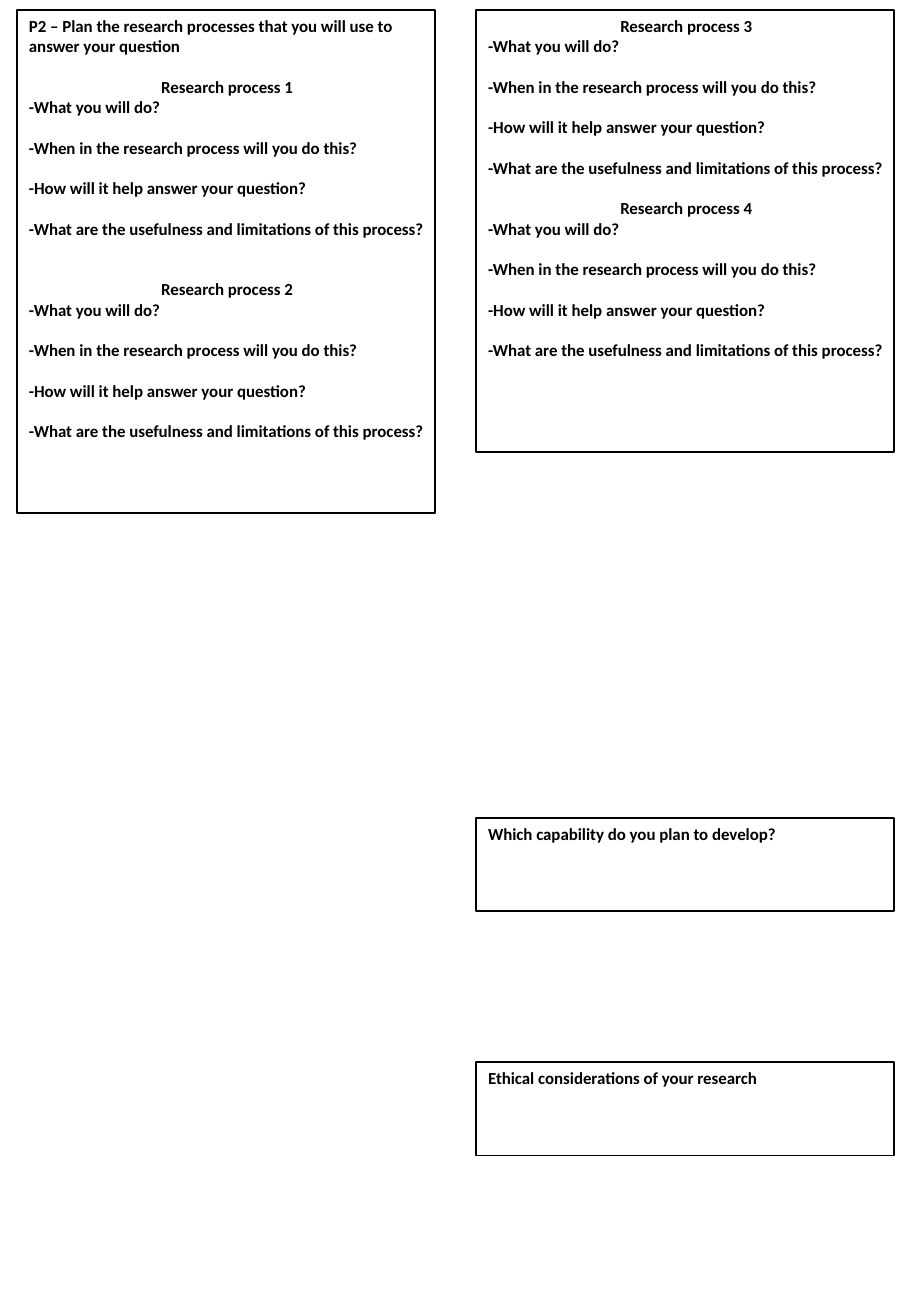
from pptx import Presentation
from pptx.dml.color import RGBColor
from pptx.enum.text import MSO_ANCHOR, MSO_AUTO_SIZE, PP_ALIGN
from pptx.util import Inches, Pt

LEFT, CENTER = PP_ALIGN.LEFT, PP_ALIGN.CENTER
TOP = MSO_ANCHOR.TOP
FIXED_SIZE = MSO_AUTO_SIZE.NONE

COLORS = {"ink": "000000"}
FONT = "Calibri"
FONT_SIZE = 10
LINE_GAP = 12  # points, the height of one text line

LEFT_COLUMN, RIGHT_COLUMN = 0.14, 3.92
BOX_WIDTH = 3.44

QUESTIONS = [
    "-What you will do?",
    "-When in the research process will you do this?",
    "-How will it help answer your question?",
    "-What are the usefulness and limitations of this process?",
]


def color(name):
    return RGBColor.from_string(COLORS[name])


def add_box(slide, left, top, height):
    """Add an outlined text box and return its text frame."""
    box = slide.shapes.add_textbox(
        Inches(left), Inches(top), Inches(BOX_WIDTH), Inches(height))
    box.line.color.rgb = color("ink")
    box.line.width = Pt(1)
    frame = box.text_frame
    frame.word_wrap = True
    frame.auto_size = FIXED_SIZE
    frame.vertical_anchor = TOP
    frame.margin_right = Inches(0.08)
    return frame


def add_line(frame, text, alignment=LEFT, gap_lines=0):
    """Write one bold paragraph, using the empty first one if there is one."""
    paragraph = frame.paragraphs[-1]
    if paragraph.runs:
        paragraph = frame.add_paragraph()
    paragraph.alignment = alignment
    paragraph.space_before = Pt(gap_lines * LINE_GAP)
    run = paragraph.add_run()
    run.text = text
    run.font.name = FONT
    run.font.size = Pt(FONT_SIZE)
    run.font.bold = True
    run.font.color.rgb = color("ink")


def add_process(frame, number, gap_lines):
    """Write a centred process heading and its four questions."""
    add_line(frame, f"Research process {number}", CENTER, gap_lines)
    for index, question in enumerate(QUESTIONS):
        add_line(frame, question, gap_lines=min(index, 1))


def main():
    presentation = Presentation()
    presentation.slide_width = Inches(7.5)
    presentation.slide_height = Inches(10.83)
    slide = presentation.slides.add_slide(presentation.slide_layouts[6])

    # Left column: task and first two processes
    frame = add_box(slide, LEFT_COLUMN, 0.08, 4.14)
    add_line(frame, "P2 – Plan the research processes that you will use to "
                    "answer your question")
    add_process(frame, 1, gap_lines=1)
    add_process(frame, 2, gap_lines=2)

    # Right column: last two processes
    frame = add_box(slide, RIGHT_COLUMN, 0.08, 3.64)
    add_process(frame, 3, gap_lines=0)
    add_process(frame, 4, gap_lines=1)

    # Right column: short answer boxes
    for top, prompt in [
        (6.73, "Which capability do you plan to develop?"),
        (8.74, "Ethical considerations of your research"),
    ]:
        add_line(add_box(slide, RIGHT_COLUMN, top, 0.77), prompt)

    presentation.save("out.pptx")


if __name__ == "__main__":
    main()
